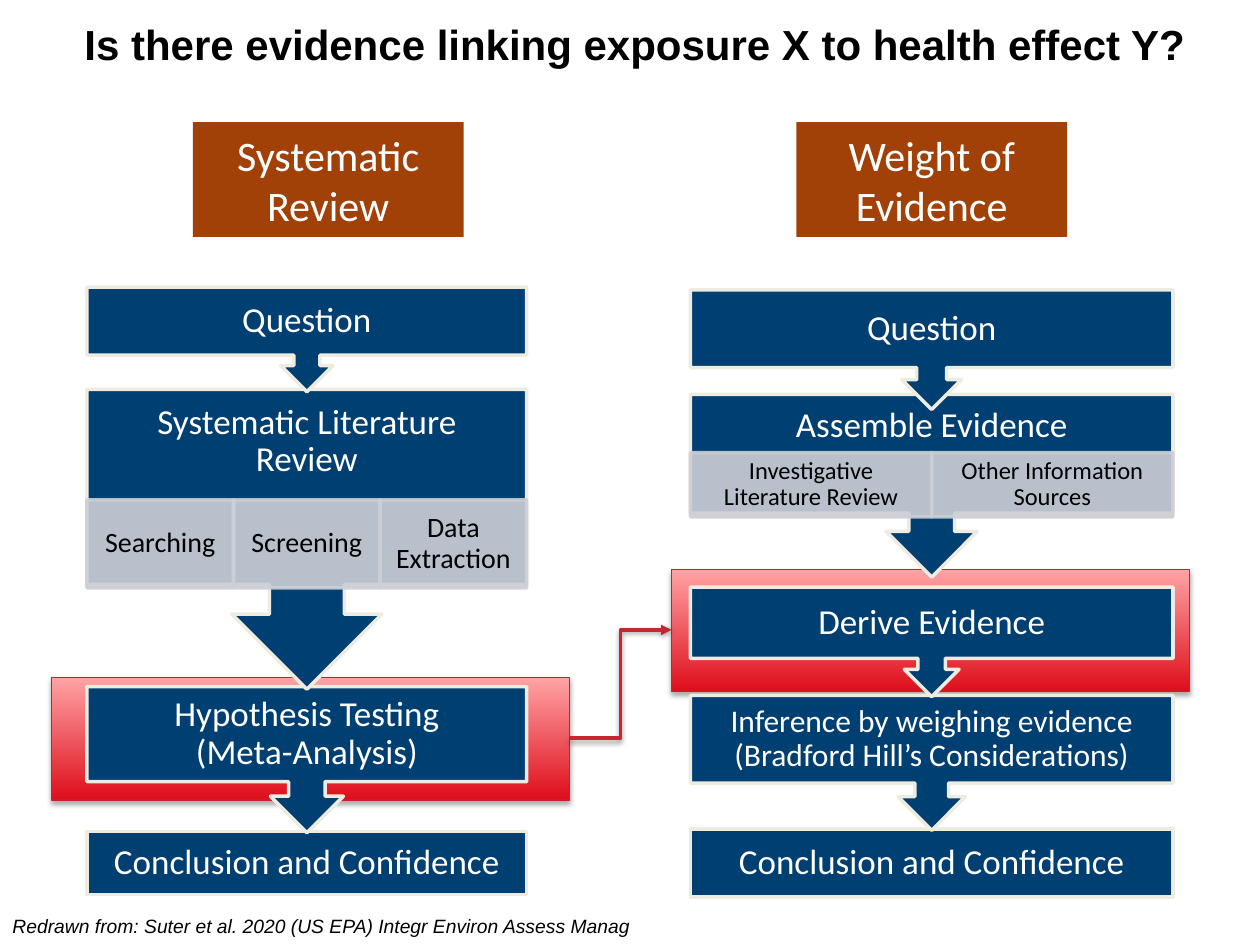
from lxml import etree
from pptx import Presentation
from pptx.dml.color import RGBColor
from pptx.enum.shapes import MSO_CONNECTOR, MSO_SHAPE
from pptx.enum.text import MSO_ANCHOR, PP_ALIGN
from pptx.oxml.ns import qn
from pptx.util import Inches, Pt

COLORS = {
    "navy": "003F72", "cream": "EEECE1", "grey": "CCCFD5", "rust": "A14108",
    "red": "DE0E1B", "pink": "FFA3A5", "panel_edge": "C6212C",
    "link": "C62630", "black": "000000", "white": "FFFFFF",
}
BODY_SHARE = 0.65  # part of a callout's height above its arrow

# Stages run from bottom to top, so each arrow overlaps the stage below it:
# text, top, height, font size, label height (if sub-steps), sub-steps
REVIEW_STAGES = [
    ("Conclusion and Confidence", 6.6, 0.5, 20, None, []),
    ("Hypothesis Testing\v(Meta-Analysis)", 5.45, 1.16, 20, None, []),
    ("Systematic Literature Review", 3.09, 2.38, 20, 0.83,
     ["Searching", "Screening", "Data Extraction"]),
    ("Question", 2.28, 0.83, 20, None, []),
]
WEIGHT_STAGES = [
    ("Conclusion and Confidence", 6.58, 0.54, 20, None, []),
    ("Inference by weighing evidence (Bradford Hill’s Considerations)",
     5.52, 1.07, 18, None, []),
    ("Derive Evidence", 4.66, 0.87, 20, None, []),
    ("Assemble Evidence", 3.13, 1.45, 20, 0.51,
     ["Investigative Literature Review", "Other Information Sources"]),
    ("Question", 2.3, 0.95, 20, None, []),
]


def rgb(name):
    return RGBColor.from_string(COLORS[name])


def set_alpha(color_parent, percent):
    color = color_parent.find(".//" + qn("a:srgbClr"))
    etree.SubElement(color, qn("a:alpha"), val=str(percent * 1000))


def add_shadow(properties, opacity, distance):
    effects = properties.find(qn("a:effectLst"))
    if effects is None:
        effects = etree.SubElement(properties, qn("a:effectLst"))
    shadow = etree.SubElement(
        effects, qn("a:outerShdw"), blurRad=str(Pt(3.1)),
        dist=str(Pt(distance)), dir="5400000", rotWithShape="0")
    etree.SubElement(shadow, qn("a:srgbClr"), val=COLORS["black"])
    set_alpha(shadow, opacity)


def write(frame, text, size, color, font="Calibri", align=PP_ALIGN.CENTER,
          anchor=MSO_ANCHOR.MIDDLE, bold=False, italic=False):
    frame.word_wrap = True
    frame.vertical_anchor = anchor
    frame.text = text
    paragraph = frame.paragraphs[0]
    paragraph.alignment = align
    paragraph.font.name = font
    paragraph.font.size = Pt(size)
    paragraph.font.bold = bold
    paragraph.font.italic = italic
    paragraph.font.color.rgb = rgb(color)
    return paragraph


def set_insets(frame, side, top, bottom):
    frame.margin_left = frame.margin_right = Inches(side)
    frame.margin_top, frame.margin_bottom = Inches(top), Inches(bottom)


def add_block(slide, kind, left, top, width, height, fill, line=None):
    block = slide.shapes.add_shape(
        kind, Inches(left), Inches(top), Inches(width), Inches(height))
    block.shadow.inherit = False
    block.fill.solid()
    block.fill.fore_color.rgb = rgb(fill)
    if line:
        block.line.color.rgb = rgb(line)
        block.line.width = Pt(2)
    else:
        block.line.fill.background()
    return block


def add_substeps(slide, names, left, top, width, height, size):
    step_width = width / len(names)
    for index, name in enumerate(names):
        step = add_block(slide, MSO_SHAPE.RECTANGLE, left + index * step_width,
                         top, step_width, height, "grey", "grey")
        properties = step.fill._xPr
        set_alpha(properties.find(qn("a:solidFill")), 90)
        set_alpha(properties.find(qn("a:ln")), 90)
        write(step.text_frame, name, size, "black").line_spacing = 0.9
        set_insets(step.text_frame, 0.12, 0.02, 0.02)


def add_flow(slide, stages, left, width, substep_height, substep_size):
    """Stack callouts that point down to a plain conclusion box."""
    for index, (text, top, height, size, label, substeps) in enumerate(stages):
        kind = MSO_SHAPE.DOWN_ARROW_CALLOUT if index else MSO_SHAPE.RECTANGLE
        stage = add_block(slide, kind, left, top, width, height,
                          "navy", "cream")
        if index:
            for number, share in enumerate((0.25, 0.25, 0.25, BODY_SHARE)):
                stage.adjustments[number] = share
        write(stage.text_frame, text, size, "white").line_spacing = 0.9
        body = height * BODY_SHARE
        below_label = body - label if label else 0
        set_insets(stage.text_frame, 0.16, 0.16, 0.16 + below_label)
        if substeps:
            add_substeps(slide, substeps, left, top + body + 0.03 - substep_height,
                         width, substep_height, substep_size)


def add_panel(slide, left, top):
    panel = add_block(slide, MSO_SHAPE.RECTANGLE, left, top, 4.11, 0.97,
                      "red", "panel_edge")
    panel.line.width = Pt(0.75)
    panel.fill.gradient()
    panel.fill.gradient_angle = 90
    for stop, color in zip(panel.fill.gradient_stops, ("red", "pink")):
        stop.color.rgb = rgb(color)
    add_shadow(panel.fill._xPr, 35, 1.8)


def add_link(slide):
    link = slide.shapes.add_connector(
        MSO_CONNECTOR.ELBOW, Inches(4.52), Inches(5.86), Inches(5.33), Inches(5))
    link.line.color.rgb = rgb("link")
    link.line.width = Pt(2)
    etree.SubElement(link.line._get_or_add_ln(), qn("a:tailEnd"),
                     type="triangle")
    add_shadow(link._element.spPr, 38, 1.6)


def add_header(slide, text, left):
    header = add_block(slide, MSO_SHAPE.RECTANGLE, left, 0.97, 2.15, 0.91, "rust")
    write(header.text_frame, text, 24, "white")


def add_title(slide, text):
    title = slide.shapes.title
    title.left, title.top = Inches(0.57), Inches(0.1)
    title.width, title.height = Inches(9.26), Inches(0.5)
    write(title.text_frame, text, 24, "black", "Arial", PP_ALIGN.LEFT,
          MSO_ANCHOR.TOP, bold=True)


def add_credit(slide, text):
    credit = slide.shapes.add_textbox(
        Inches(0), Inches(7.21), Inches(5.92), Inches(0.29))
    write(credit.text_frame, text, 11, "black", "Arial", PP_ALIGN.LEFT,
          MSO_ANCHOR.TOP, italic=True)


def main():
    deck = Presentation()
    deck.slide_width, deck.slide_height = Inches(10), Inches(7.5)
    slide = deck.slides.add_slide(deck.slide_layouts[5])
    add_title(slide, "Is there evidence linking exposure X to health effect Y?")
    add_panel(slide, 0.41, 5.38)
    add_panel(slide, 5.33, 4.52)
    add_link(slide)
    add_flow(slide, WEIGHT_STAGES, 5.48, 3.83, 0.51, 14)
    add_flow(slide, REVIEW_STAGES, 0.69, 3.49, 0.7, 16)
    add_credit(slide, "Redrawn from: Suter et al. 2020 (US EPA) "
                      "Integr Environ Assess Manag")
    add_header(slide, "Systematic Review", 1.53)
    add_header(slide, "Weight of Evidence", 6.32)
    deck.save("out.pptx")


if __name__ == "__main__":
    main()
